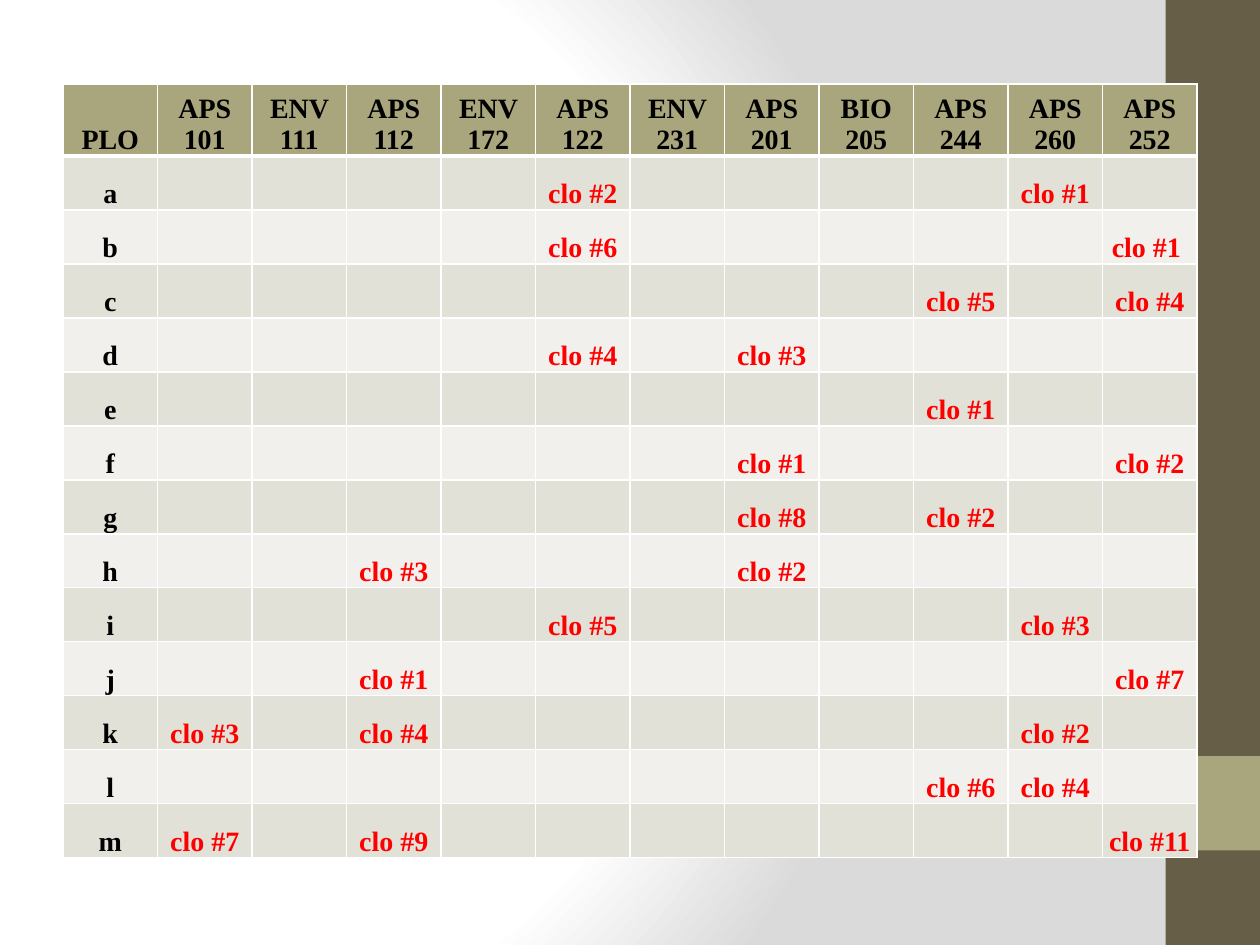
from lxml.etree import SubElement
from pptx import Presentation
from pptx.dml.color import RGBColor
from pptx.enum.shapes import MSO_SHAPE
from pptx.enum.text import MSO_ANCHOR, PP_ALIGN
from pptx.oxml import parse_xml
from pptx.oxml.ns import nsdecls, qn
from pptx.util import Pt

COURSES = ["APS 101", "ENV 111", "APS 112", "ENV 172", "APS 122", "ENV 231",
           "APS 201", "BIO 205", "APS 244", "APS 260", "APS 252"]
OUTCOMES = {
    "a": {"APS 122": "clo #2", "APS 260": "clo #1"},
    "b": {"APS 122": "clo #6", "APS 252": "clo #1 "},
    "c": {"APS 244": "clo #5", "APS 252": "clo #4"},
    "d": {"APS 122": "clo #4", "APS 201": "clo #3"},
    "e": {"APS 244": "clo #1"},
    "f": {"APS 201": "clo #1", "APS 252": "clo #2"},
    "g": {"APS 201": "clo #8", "APS 244": "clo #2"},
    "h": {"APS 112": "clo #3", "APS 201": "clo #2"},
    "i": {"APS 122": "clo #5", "APS 260": "clo #3"},
    "j": {"APS 112": "clo #1", "APS 252": "clo #7"},
    "k": {"APS 101": "clo #3", "APS 112": "clo #4", "APS 260": "clo #2"},
    "l": {"APS 244": "clo #6", "APS 260": "clo #4"},
    "m": {"APS 101": "clo #7", "APS 112": "clo #9", "APS 252": "clo #11"},
}


def color(hex_code):
    return RGBColor.from_string(hex_code)


class Deck:
    font, size = "Times New Roman", 16
    black, red, white = "000000", "FF0000", "FFFFFF"
    brown, olive = "675E47", "A9A57C"
    bands = ("F1F0EC", "E2E1D7")

    def __init__(self, prs):
        self.s = prs.slides.add_slide(prs.slide_layouts[6])

    def background(self, stops):
        """Fill the slide with a circular gradient of (percent, colour) stops."""
        fill = self.s.background.fill
        fill.gradient()
        grad = self.s.background._cSld.find(".//" + qn("a:gradFill"))
        for child in list(grad):
            grad.remove(child)
        gs_list = SubElement(grad, qn("a:gsLst"))
        for percent, hex_code in stops:
            gs = SubElement(gs_list, qn("a:gs"), pos=str(percent * 1000))
            SubElement(gs, qn("a:srgbClr"), val=hex_code)
        circle = SubElement(grad, qn("a:path"), path="circle")
        SubElement(circle, qn("a:fillToRect"),
                   l="20000", t="50000", r="100000", b="50000")

    def block(self, x, y, w, h, fill):
        sp = self.s.shapes.add_shape(MSO_SHAPE.RECTANGLE, Pt(x), Pt(y), Pt(w), Pt(h))
        sp.shadow.inherit = False
        sp.fill.solid()
        sp.fill.fore_color.rgb = color(fill)
        sp.line.fill.background()

    def borders(self, cell, top, bottom):
        tc_pr = cell._tc.get_or_add_tcPr()
        for side, width in (("L", 1), ("R", 1), ("T", top), ("B", bottom)):
            tc_pr.append(parse_xml(
                f'<a:ln{side} {nsdecls("a")} w="{Pt(width)}"><a:solidFill>'
                f'<a:srgbClr val="{self.white}"/></a:solidFill></a:ln{side}>'))

    def cell(self, cell, text, fill, ink, top, bottom):
        self.borders(cell, top, bottom)
        cell.fill.solid()
        cell.fill.fore_color.rgb = color(fill)
        cell.vertical_anchor = MSO_ANCHOR.BOTTOM
        cell.margin_left = cell.margin_top = cell.margin_right = Pt(0.72)
        cell.margin_bottom = 0
        p = cell.text_frame.paragraphs[0]
        if text:
            p.text = text
        p.alignment = PP_ALIGN.CENTER
        p.font.name, p.font.size, p.font.bold = self.font, Pt(self.size), True
        p.font.color.rgb = color(ink)

    def table(self, x, y, col_width, header_height, row_height, rows):
        n_rows, n_cols = len(rows), len(rows[0])
        height = header_height + row_height * (n_rows - 1)
        table = self.s.shapes.add_table(
            n_rows, n_cols, Pt(x), Pt(y), Pt(col_width * n_cols), Pt(height)).table
        for column in table.columns:
            column.width = Pt(col_width)
        for i, row in enumerate(rows):
            table.rows[i].height = Pt(row_height if i else header_height)
            fill = self.bands[i % 2] if i else self.olive
            top, bottom = 3 if i == 1 else 1, 1 if i else 3
            for j, text in enumerate(row):
                ink = self.red if i and j else self.black
                self.cell(table.cell(i, j), text, fill, ink, top, bottom)


def main():
    prs = Presentation()
    prs.slide_width, prs.slide_height = Pt(720), Pt(540)
    deck = Deck(prs)
    deck.background([(0, "FFFFFF"), (75, "FFFFFF"), (100, "DADADA")])
    deck.block(666, 0, 54, 540, deck.brown)
    deck.block(666, 432, 54, 54, deck.olive)
    rows = [["PLO"] + COURSES]
    rows += [[plo] + [clos.get(course, "") for course in COURSES]
             for plo, clos in OUTCOMES.items()]
    deck.table(36, 48, 54, 41.14, 30.86, rows)
    prs.save("out.pptx")


if __name__ == "__main__":
    main()
